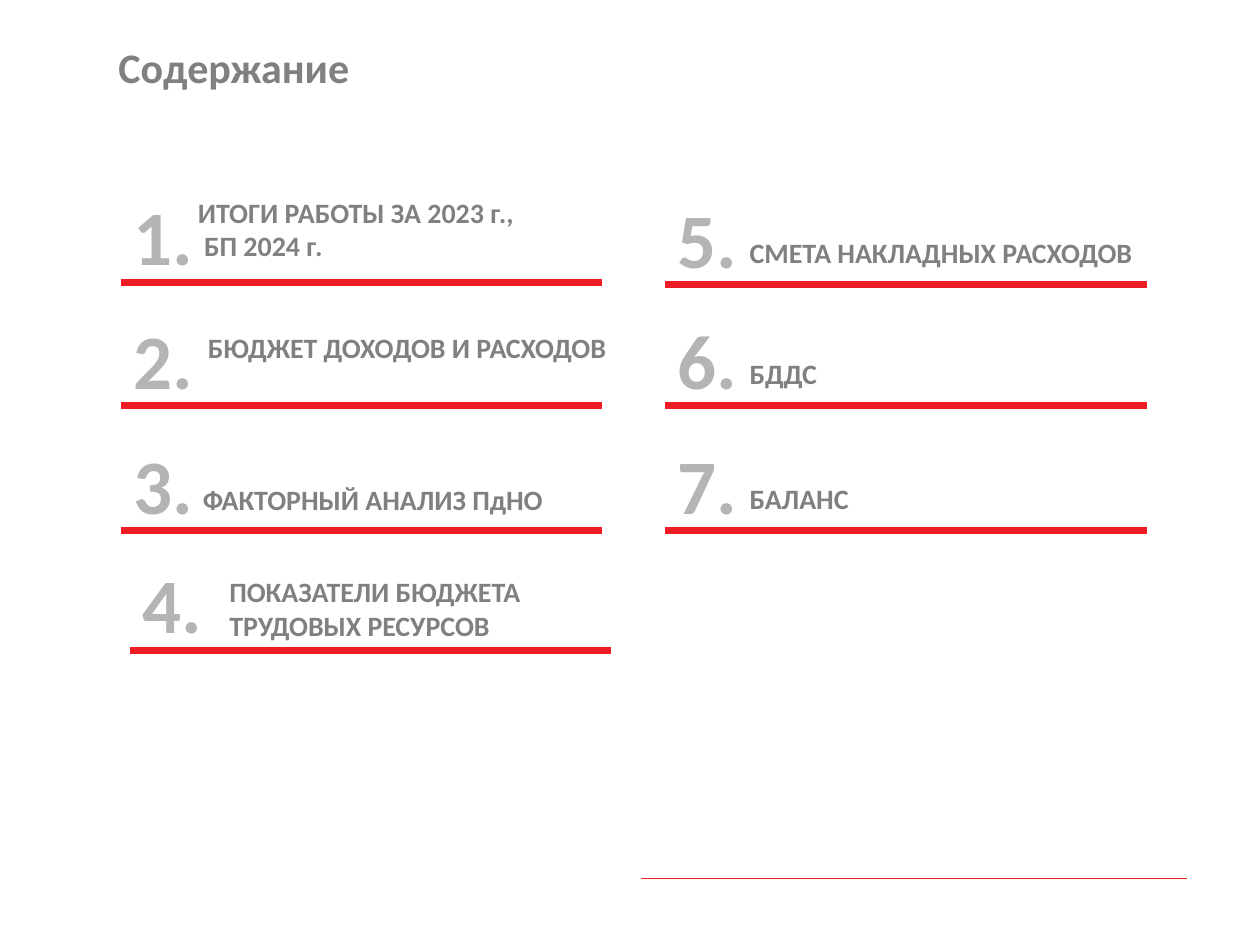
"""Build the contents slide: numbered sections above red rules in two columns."""
from lxml.etree import SubElement
from pptx import Presentation
from pptx.dml.color import RGBColor
from pptx.enum.shapes import MSO_CONNECTOR as Connector
from pptx.enum.text import MSO_ANCHOR as Anchor, PP_ALIGN as Align
from pptx.oxml.ns import qn
from pptx.util import Inches, Pt

RED = RGBColor(0xED, 0x1C, 0x24)
GRAY = RGBColor(0x80, 0x80, 0x80)
LIGHT_GRAY = RGBColor(0xB2, 0xB4, 0xB5)

COLUMNS = (0.96, 5.28)
ROWS = (2.24, 3.22, 4.21, 5.16)
RULE_WIDTH = 3.82
NUMBER_RISE = 0.79

# column, row, shift right, shift down, label offset, label rise, label width, lines
SECTIONS = (
    (0, 0, 0, 0, 0.61, 0.69, 3.42, ("ИТОГИ РАБОТЫ ЗА 2023 г.,", "БП 2024 г.")),
    (0, 1, 0, 0, 0.69, 0.6, 3.24, ("БЮДЖЕТ ДОХОДОВ И РАСХОДОВ",)),
    (0, 2, 0, 0, 0.65, 0.38, 3.24, ("ФАКТОРНЫЙ АНАЛИЗ ПдНО",)),
    (0, 3, 0.07, 0, 0.79, 0.6, 3.24, ("ПОКАЗАТЕЛИ БЮДЖЕТА ТРУДОВЫХ РЕСУРСОВ",)),
    (1, 0, 0, 0.02, 0.67, 0.39, 3.24, ("СМЕТА НАКЛАДНЫХ РАСХОДОВ",)),
    (1, 1, 0, 0, 0.67, 0.39, 3.24, ("БДДС",)),
    (1, 2, 0, 0, 0.67, 0.39, 3.24, ("БАЛАНС",)),
)


def write(tf, *lines, size=16, color=GRAY, margin=0, wrap=True, anchor=Anchor.TOP, indent=0):
    """Fill a text frame with bold lines, indenting those after the first."""
    tf.word_wrap = wrap
    tf.vertical_anchor = anchor
    tf.margin_left = tf.margin_right = Inches(margin)
    tf.margin_top = tf.margin_bottom = Inches(margin / 2)
    for i, text in enumerate(lines):
        p = tf.add_paragraph() if i else tf.paragraphs[0]
        p.alignment = Align.LEFT
        if i and indent:
            p._p.get_or_add_pPr().set("marL", str(Inches(indent)))
        r = p.add_run()
        r.text = text
        r.font.name = "Calibri"
        r.font.size = Pt(size)
        r.font.bold = True
        r.font.color.rgb = color


def add_text(s, x, y, w, h, *lines, **style):
    """Add a text box holding the given lines."""
    sp = s.shapes.add_textbox(Inches(x), Inches(y), Inches(w), Inches(h))
    write(sp.text_frame, *lines, **style)


def add_rule(s, x, y, w, weight):
    """Add a horizontal red line without a shadow."""
    line = s.shapes.add_connector(
        Connector.STRAIGHT, Inches(x), Inches(y), Inches(x + w), Inches(y))
    line.line.color.rgb = RED
    line.line.width = Pt(weight)
    SubElement(line._element.spPr, qn("a:effectLst"))


def add_title(s, text):
    """Place and format the title placeholder."""
    sp = s.shapes.title
    sp.left, sp.top, sp.width, sp.height = map(Inches, (0.94, 0.33, 2.56, 0.4))
    write(sp.text_frame, text, size=24, anchor=Anchor.MIDDLE)


def add_section(s, number, column, row, right, down, offset, rise, width, lines):
    """Add one numbered section standing on its rule."""
    x, y = COLUMNS[column] + right, ROWS[row] + down
    add_text(s, x + offset, y - rise, width, 0.54 if rise > 0.5 else 0.27,
             *lines, indent=0.05)
    add_rule(s, x, y, RULE_WIDTH, 4)
    add_text(s, x, y - NUMBER_RISE, 0.69, 0.84, f"{number}.",
             size=44, color=LIGHT_GRAY, margin=0.1, wrap=False)


def main():
    """Build and save the slide."""
    prs = Presentation()
    prs.slide_width, prs.slide_height = Inches(10), Inches(7.5)
    s = prs.slides.add_slide(prs.slide_layouts[5])
    add_rule(s, 5.09, 6.97, 4.33, 0.75)
    add_title(s, "Содержание")
    for number, section in enumerate(SECTIONS, 1):
        add_section(s, number, *section)
    prs.save("out.pptx")


if __name__ == "__main__":
    main()
